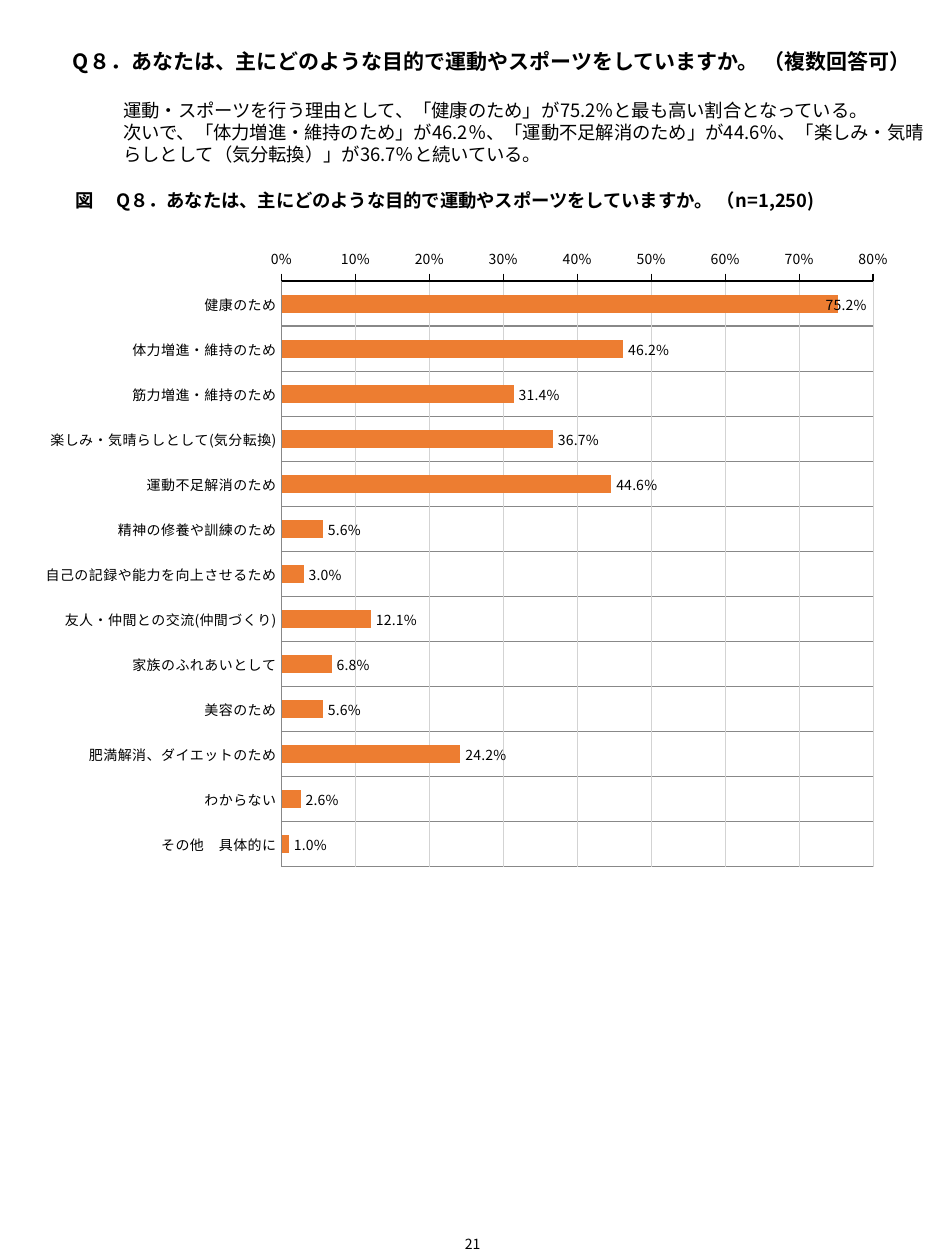
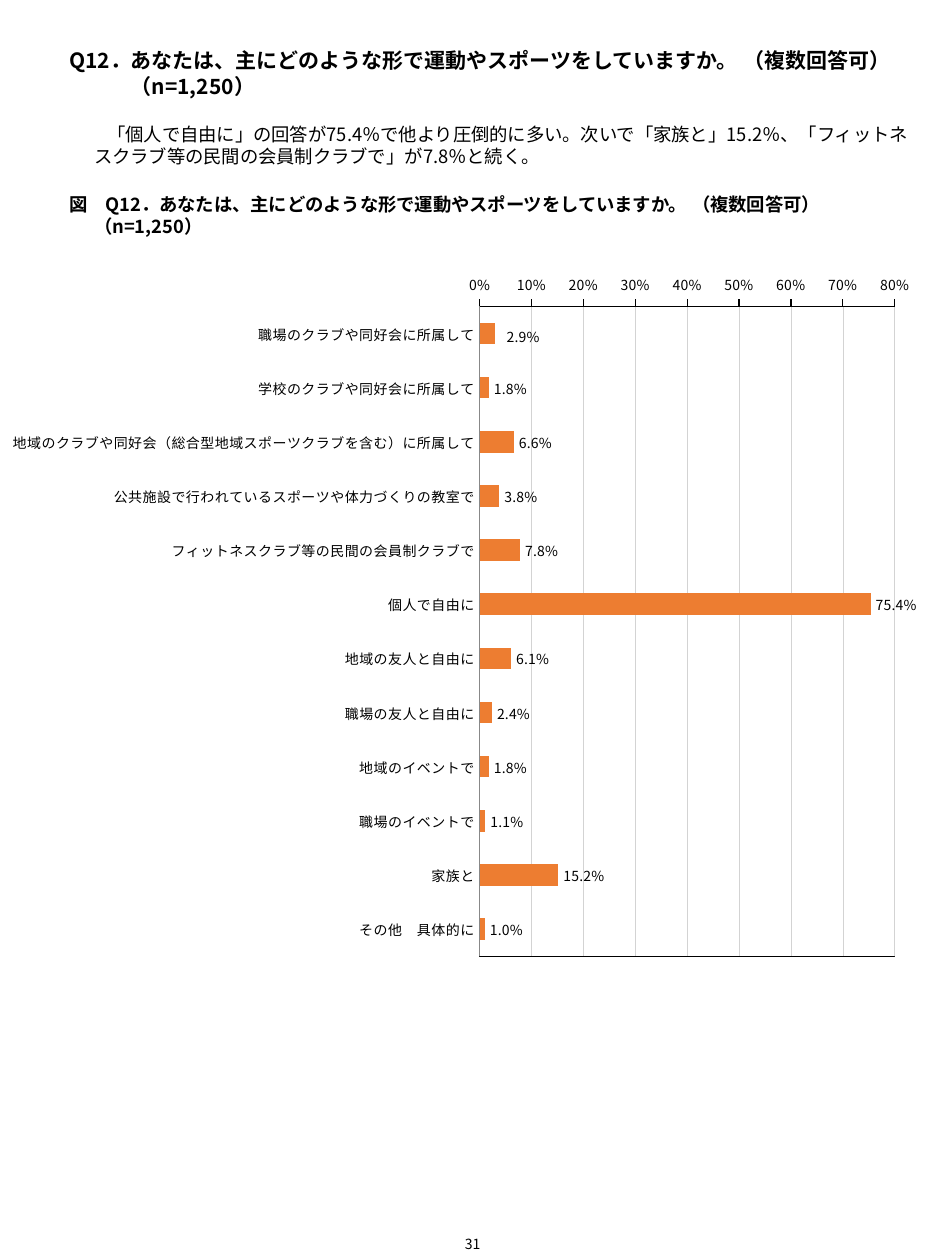
from dataclasses import dataclass

from lxml import etree
from pptx import Presentation
from pptx.chart.data import CategoryChartData
from pptx.dml.color import RGBColor
from pptx.enum import chart as chart_enum, text
from pptx.oxml import ns, parse_xml
from pptx.util import Pt

FONT = "Noto Sans CJK JP"
COLORS = {"ink": "000000", "bar": "ED7D31", "axis": "888888", "grid": "D3D3D3"}
TITLE_SIZE, BODY_SIZE, SMALL_SIZE = 12, 10.5, 8
LINE_HEIGHT = 1.2
BLANK_LINE = TITLE_SIZE * LINE_HEIGHT
PLOT_AREA = {"x": 0.595, "y": 0.039, "w": 0.383, "h": 0.943}
TIGHT = -150

PURPOSES = {
    "健康のため": 75.2,
    "体力増進・維持のため": 46.2,
    "筋力増進・維持のため": 31.4,
    "楽しみ・気晴らしとして(気分転換)": 36.7,
    "運動不足解消のため": 44.6,
    "精神の修養や訓練のため": 5.6,
    "自己の記録や能力を向上させるため": 3,
    "友人・仲間との交流(仲間づくり)": 12.1,
    "家族のふれあいとして": 6.8,
    "美容のため": 5.6,
    "肥満解消、ダイエットのため": 24.2,
    "わからない": 2.6,
    "その他　具体的に": 1,
}
SETTINGS = {
    "職場のクラブや同好会に所属して": 2.9,
    "学校のクラブや同好会に所属して": 1.8,
    "地域のクラブや同好会（総合型地域スポーツクラブを含む）に所属して": 6.6,
    "公共施設で行われているスポーツや体力づくりの教室で": 3.8,
    "フィットネスクラブ等の民間の会員制クラブで": 7.8,
    "個人で自由に": 75.4,
    "地域の友人と自由に": 6.1,
    "職場の友人と自由に": 2.4,
    "地域のイベントで": 1.8,
    "職場のイベントで": 1.1,
    "家族と": 15.2,
    "その他　具体的に": 1,
}
Q8 = "Q８．あなたは、主にどのような目的で運動やスポーツをしていますか。 "
Q12 = "Q12．あなたは、主にどのような形で運動やスポーツをしていますか。 "
Q12_ENDING = [("（", TIGHT), ("複数回答可）\n（n=1,250）", 0)]


@dataclass
class Line:
    """A paragraph made of (words, letter spacing) spans."""
    spans: list
    size: float = BODY_SIZE
    bold: bool = False
    left: float = 0
    first: float = 0
    before: float = 0
    centered: bool = False


def color(name):
    return RGBColor.from_string(COLORS[name])


def style_font(font, size, bold=False):
    font.size = Pt(size)
    font.bold = bold
    font.color.rgb = color("ink")
    font.name = FONT


def style_line(line, name, width):
    line.color.rgb = color(name)
    line.width = Pt(width)


def fill_paragraph(para, line):
    properties = para._p.get_or_add_pPr()
    properties.set("marL", str(Pt(line.left)))
    properties.set("indent", str(Pt(line.first)))
    para.line_spacing = Pt(line.size * LINE_HEIGHT)
    if line.before:
        para.space_before = Pt(line.before)
    if line.centered:
        para.alignment = text.PP_ALIGN.CENTER
    style_font(para.font, line.size, line.bold)
    defaults = properties.find(ns.qn("a:defRPr"))
    etree.SubElement(defaults, ns.qn("a:ea")).set("typeface", FONT)
    for words, spacing in line.spans:
        for index, piece in enumerate(words.split("\n")):
            if index:
                para.add_line_break()
            span = para.add_run()
            span.text = piece
            if spacing:
                span._r.get_or_add_rPr().set("spc", str(spacing))


def add_text(page, frame, lines, wrap=True):
    box = page.shapes.add_textbox(*map(Pt, frame))
    box.text_frame.word_wrap = wrap
    box.text_frame.auto_size = text.MSO_AUTO_SIZE.SHAPE_TO_FIT_TEXT
    for index, line in enumerate(lines):
        paragraphs = box.text_frame
        para = paragraphs.add_paragraph() if index else paragraphs.paragraphs[0]
        fill_paragraph(para, line)


def add_page_number(page, number):
    line = Line([(str(number), 0)], SMALL_SIZE, centered=True)
    add_text(page, (257.8, 702.7, 24.5, 17.3), [line], wrap=False)


def manual_layout(values, modes=""):
    parts = "".join(f'<c:{key} val="{value}"/>' for key, value in values.items())
    return parse_xml(f'<c:layout {ns.nsdecls("c")}><c:manualLayout>{modes}{parts}'
                     '</c:manualLayout></c:layout>')


def place_plot(chart):
    area = chart.element.xpath(".//c:plotArea")[0]
    for layout in area.findall(ns.qn("c:layout")):
        area.remove(layout)
    modes = ('<c:layoutTarget val="inner"/><c:xMode val="edge"/>'
             '<c:yMode val="edge"/>')
    area.insert(0, manual_layout(PLOT_AREA, modes))


def frame_plot(chart):
    area = chart.element.xpath(".//c:plotArea")[0]
    area.append(parse_xml(
        f'<c:spPr {ns.nsdecls("c", "a")}><a:noFill/><a:ln w="{Pt(0.75)}"><a:solidFill>'
        f'<a:srgbClr val="{COLORS["ink"]}"/></a:solidFill></a:ln></c:spPr>'))


def style_axes(chart, row_lines):
    rows, scale = chart.category_axis, chart.value_axis
    rows.reverse_order = True
    rows.major_tick_mark = chart_enum.XL_TICK_MARK.NONE
    rows.has_major_gridlines = row_lines
    if row_lines:
        style_line(rows.major_gridlines.format.line, "axis", 0.75)
    scale.minimum_scale, scale.maximum_scale, scale.major_unit = 0, 80, 10
    scale.major_tick_mark = chart_enum.XL_TICK_MARK.OUTSIDE
    scale.has_major_gridlines = True
    style_line(scale.major_gridlines.format.line, "grid", 0.25)
    scale.tick_labels.number_format = '0"%"'
    scale.tick_labels.number_format_is_linked = False
    for axis, line_color in ((rows, "axis"), (scale, "ink")):
        axis.minor_tick_mark = chart_enum.XL_TICK_MARK.NONE
        style_font(axis.tick_labels.font, SMALL_SIZE)
        style_line(axis.format.line, line_color, 0.75)


def style_labels(chart, first_shift):
    """Label every bar and nudge the first label by a share of the chart size."""
    series = chart.plots[0].series[0]
    labels = series.data_labels
    labels.show_value = True
    labels.number_format = '0.0"%"'
    labels.number_format_is_linked = False
    first = series.points[0].data_label
    for label in (labels, first):
        label.position = chart_enum.XL_LABEL_POSITION.OUTSIDE_END
        style_font(label.font, SMALL_SIZE)
    index = chart.element.xpath(".//c:dLbl/c:idx")[0]
    number_format = etree.Element(ns.qn("c:numFmt"), formatCode='0.0"%"', sourceLinked="0")
    index.addnext(number_format)
    index.addnext(manual_layout(dict(zip("xy", first_shift))))


def add_bar_chart(page, frame, answers, first_shift, row_lines=False):
    data = CategoryChartData(number_format='0.0"%"')
    data.categories = list(answers)
    data.add_series("Series 1", list(answers.values()))
    kind = chart_enum.XL_CHART_TYPE.BAR_CLUSTERED
    chart = page.shapes.add_chart(kind, *map(Pt, frame), data).chart
    chart.has_title = chart.has_legend = False
    style_font(chart.font, SMALL_SIZE)
    plot = chart.plots[0]
    plot.vary_by_categories = False
    plot.gap_width, plot.overlap = 150, -25
    bars = plot.series[0].format.fill
    bars.solid()
    bars.fore_color.rgb = color("bar")
    style_axes(chart, row_lines)
    style_labels(chart, first_shift)
    place_plot(chart)
    if not row_lines:
        frame_plot(chart)


def add_purpose_page(page):
    add_text(page, (34.6, 24.5, 500.4, 74.9), [
        Line([(Q8 + "（複数回答可）", 0)], TITLE_SIZE, True),
        Line([("運動・スポーツを行う理由として、「健康のため」が75.2％と最も高い割合となっている。", 0)],
             left=28.8, before=BLANK_LINE),
        Line([("次いで、「体力増進・維持のため」が46.2％、「運動不足解消のため」が44.6％、"
               "「楽しみ・気晴らしとして（気分転換）」が36.7％と続いている。", 0)], left=28.8),
    ])
    add_text(page, (36, 104.4, 521.3, 20.9),
             [Line([("図　 " + Q8 + "（n=1,250)", 0)], bold=True)])
    add_bar_chart(page, (-364.3, 141.8, 882.7, 360), PURPOSES, (-0.011, 0), row_lines=True)
    add_page_number(page, 21)


def add_setting_page(page):
    add_text(page, (32.4, 23.8, 493.9, 77), [
        Line([(Q12, 0), *Q12_ENDING], TITLE_SIZE, True, left=35.3, first=-35.3),
        Line([("「個人で自由に」の回答が75.4％で他より圧倒的に多い。次いで「家族と」15.2％、"
               "「フィットネスクラブ等の民間の会員制クラブで」が7.8％と続く。", 0)],
             left=14.4, first=7.6, before=BLANK_LINE),
    ])
    add_text(page, (32.4, 106.6, 493.9, 32.4),
             [Line([("図　" + Q12, 0), *Q12_ENDING], bold=True, left=14.4, first=-14.4)])
    add_bar_chart(page, (-94.3, 156.2, 619.2, 397.4), SETTINGS, (0.0065, 0.003))
    add_page_number(page, 31)


def main():
    deck = Presentation()
    deck.slide_width, deck.slide_height = Pt(540), Pt(720)
    blank = deck.slide_layouts[6]
    for build in (add_purpose_page, add_setting_page):
        build(deck.slides.add_slide(blank))
    deck.save("out.pptx")


if __name__ == "__main__":
    main()
